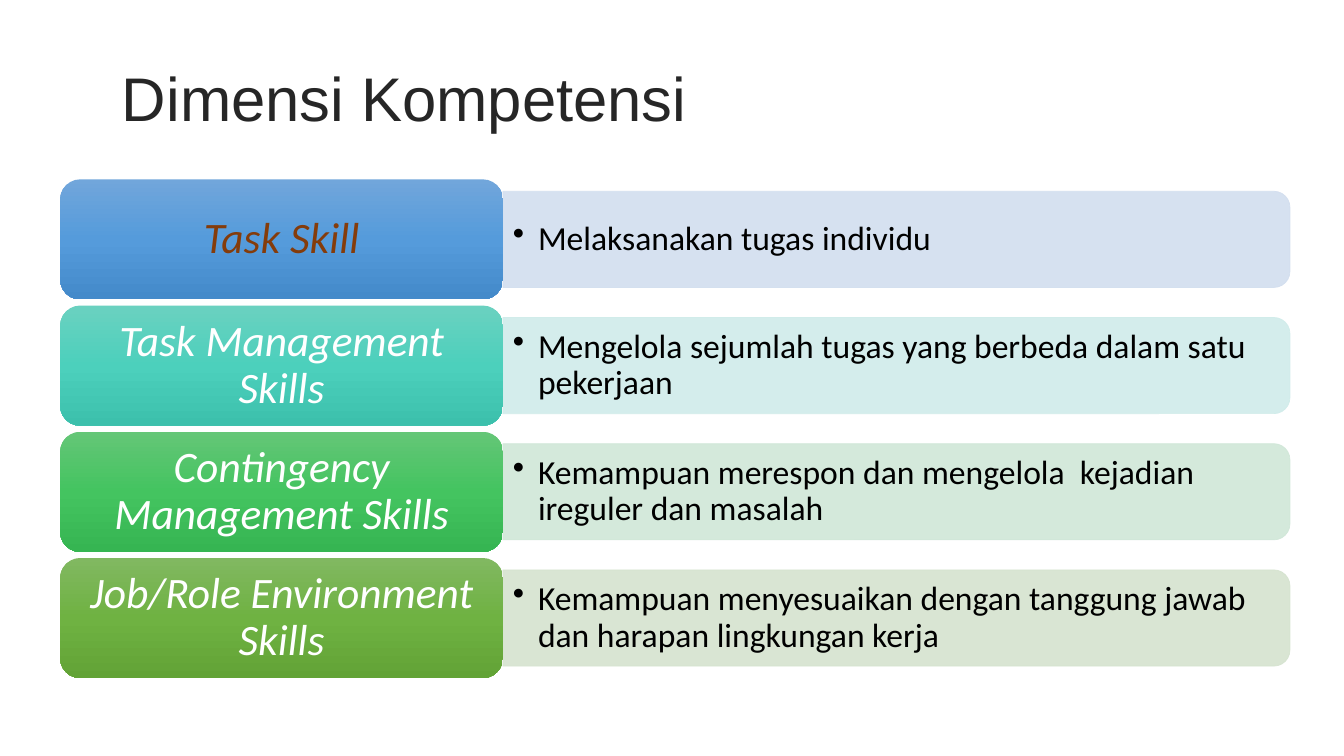
import copy

import pptx
import pptx.dml.color
import pptx.enum.shapes
import pptx.enum.text
import pptx.oxml
import pptx.oxml.ns
import pptx.util

Pt = pptx.util.Pt
RGB = pptx.dml.color.RGBColor.from_string
qn = pptx.oxml.ns.qn
SHAPES = pptx.enum.shapes.MSO_SHAPE
ALIGN = pptx.enum.text.PP_ALIGN

TITLE = "Dimensi Kompetensi"
DIMENSIONS = [
    {"skill": "Task Skill", "meaning": "Melaksanakan tugas individu",
     "gradient": ("71A6DB", "559BDB", "448ACA"), "panel": "D2DEEF", "ink": "843C0B"},
    {"skill": "Task Management Skills",
     "meaning": "Mengelola sejumlah tugas yang berbeda dalam satu pekerjaan",
     "gradient": ("6AD1C0", "4CD0BC", "3CC0AC"), "panel": "D0ECEA", "ink": "FFFFFF"},
    {"skill": "Contingency Management Skills",
     "meaning": "Kemampuan merespon dan mengelola  kejadian ireguler dan masalah",
     "gradient": ("64C677", "44C460", "36B552"), "panel": "D0E7D8", "ink": "FFFFFF"},
    {"skill": "Job/Role Environment Skills",
     "meaning": "Kemampuan menyesuaikan dengan tanggung jawab dan harapan lingkungan kerja",
     "gradient": ("81B861", "6FB242", "62A336"), "panel": "D5E3CF", "ink": "FFFFFF"},
]

THEME = {
    "title_font": "Arial", "body_font": "Calibri",
    "title_ink": "262626", "body_ink": "000000",
    "title_size": 44, "skill_size": 31, "meaning_size": 24,
    "panel_opacity": 90,
}

SLIDE_WIDTH, SLIDE_HEIGHT = 960, 540
ROWS_TOP, ROW_PITCH = 128.1, 90.15
LABEL_LEFT, LABEL_WIDTH, LABEL_HEIGHT = 43, 316.2, 85.8
PANEL_LEFT = LABEL_LEFT + LABEL_WIDTH
PANEL_WIDTH, PANEL_HEIGHT = 562.2, 68.7
MEANING_WIDTH, MEANING_HEIGHT = 558.8, 62
BULLET_INDENT = 18


def write_text(shape, text, *, font, size, color, italic=False, align=ALIGN.LEFT,
               insets=(7.2, 3.6), bullet=False):
    frame = shape.text_frame
    frame.word_wrap = True
    frame.vertical_anchor = pptx.enum.text.MSO_ANCHOR.MIDDLE
    frame.margin_left = frame.margin_right = Pt(insets[0])
    frame.margin_top = frame.margin_bottom = Pt(insets[1])
    paragraph = frame.paragraphs[0]
    paragraph.alignment = align
    paragraph.line_spacing = 0.9
    run = paragraph.add_run()
    run.text = text
    run.font.name = font
    run.font.size = Pt(size)
    run.font.italic = italic
    run.font.color.rgb = RGB(color)
    if bullet:
        properties = paragraph._p.get_or_add_pPr()
        properties.set("marL", str(Pt(BULLET_INDENT)))
        properties.set("indent", str(-Pt(BULLET_INDENT)))
        mark = pptx.oxml.parse_xml(
            '<a:buChar xmlns:a="http://schemas.openxmlformats.org/drawingml/2006/main" char="•"/>')
        properties.append(mark)


def add_text_box(slide, left, top, width, height, text, **text_format):
    box = slide.shapes.add_textbox(Pt(left), Pt(top), Pt(width), Pt(height))
    write_text(box, text, **text_format)


def add_panel(slide, middle, color):
    """Add a bar rounded on the right: a top-rounded shape turned a quarter."""
    left = PANEL_LEFT + (PANEL_WIDTH - PANEL_HEIGHT) / 2
    panel = slide.shapes.add_shape(
        SHAPES.ROUND_2_SAME_RECTANGLE, Pt(left), Pt(middle - PANEL_WIDTH / 2),
        Pt(PANEL_HEIGHT), Pt(PANEL_WIDTH))
    panel.rotation = 90
    panel.shadow.inherit = False
    panel.fill.solid()
    panel.fill.fore_color.rgb = RGB(color)
    panel.line.color.rgb = RGB(color)
    panel.line.width = Pt(0.5)
    for color_element in panel._element.spPr.iter(qn("a:srgbClr")):
        alpha = color_element.makeelement(
            qn("a:alpha"), {"val": str(THEME["panel_opacity"] * 1000)})
        color_element.append(alpha)


def fill_gradient(shape, colors):
    """Fill from top to bottom with three evenly spaced colours."""
    shape.fill.gradient()
    shape.fill.gradient_angle = 270
    stop_list = shape._element.spPr.find(".//" + qn("a:gsLst"))
    stop_list.insert(1, copy.deepcopy(stop_list[0]))
    for index, (stop, color) in enumerate(zip(shape.fill.gradient_stops, colors)):
        stop.position = index / 2
        stop.color.rgb = RGB(color)


def add_label(slide, top, dimension):
    label = slide.shapes.add_shape(
        SHAPES.ROUNDED_RECTANGLE, Pt(LABEL_LEFT), Pt(top), Pt(LABEL_WIDTH), Pt(LABEL_HEIGHT))
    label.shadow.inherit = False
    label.line.fill.background()
    fill_gradient(label, dimension["gradient"])
    write_text(label, dimension["skill"], font=THEME["body_font"], size=THEME["skill_size"],
               color=dimension["ink"], italic=True, align=ALIGN.CENTER, insets=(9.4, 4.3))


def main():
    presentation = pptx.Presentation()
    presentation.slide_width, presentation.slide_height = Pt(SLIDE_WIDTH), Pt(SLIDE_HEIGHT)
    slide = presentation.slides.add_slide(presentation.slide_layouts[6])

    add_text_box(slide, 80, 39.6, 712, 66.2, TITLE, font=THEME["title_font"],
                 size=THEME["title_size"], color=THEME["title_ink"])
    for row, dimension in enumerate(DIMENSIONS):
        top = ROWS_TOP + row * ROW_PITCH
        middle = top + LABEL_HEIGHT / 2
        add_panel(slide, middle, dimension["panel"])
        add_text_box(slide, PANEL_LEFT, middle - MEANING_HEIGHT / 2, MEANING_WIDTH,
                     MEANING_HEIGHT, dimension["meaning"], font=THEME["body_font"],
                     size=THEME["meaning_size"], color=THEME["body_ink"], bullet=True)
        add_label(slide, top, dimension)

    presentation.save("out.pptx")


if __name__ == "__main__":
    main()
